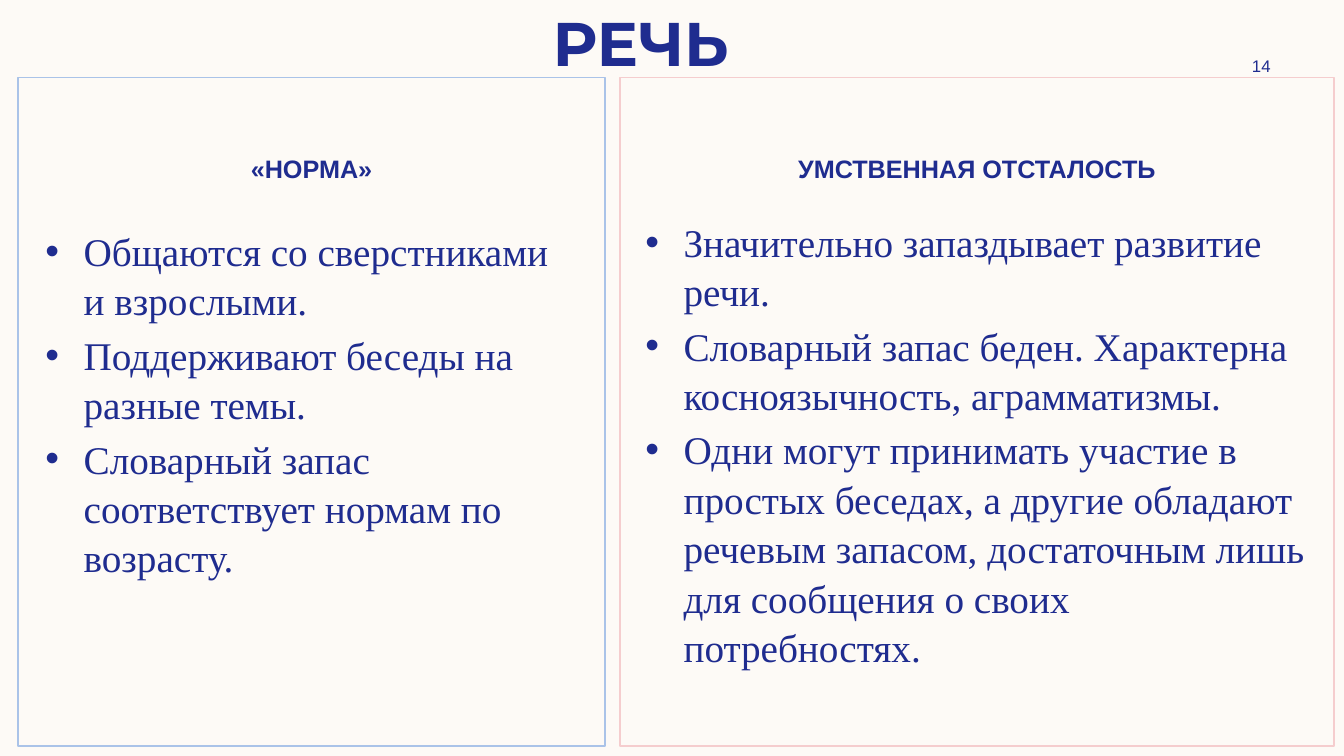
from lxml import etree
from pptx import Presentation
from pptx.dml.color import RGBColor
from pptx.enum.text import MSO_ANCHOR, MSO_AUTO_SIZE, PP_ALIGN
from pptx.oxml.ns import qn
from pptx.util import Inches, Pt

TOP, MIDDLE = MSO_ANCHOR.TOP, MSO_ANCHOR.MIDDLE
CENTER, LEFT = PP_ALIGN.CENTER, PP_ALIGN.LEFT
NO_FIT = MSO_AUTO_SIZE.NONE

NAVY = RGBColor(0x1F, 0x2C, 0x8F)
CREAM = RGBColor(0xFD, 0xFA, 0xF6)
BLUE = RGBColor(0xAA, 0xC3, 0xE8)
PINK = RGBColor(0xF5, 0xCD, 0xCE)

TITLE = "РЕЧЬ"
PAGE_NUMBER = "14"
COLUMNS = [
    {
        "heading": "«НОРМА»",
        "points": [
            "Общаются со сверстниками и взрослыми.",
            "Поддерживают беседы на разные темы.",
            "Словарный запас соответствует нормам по возрасту.",
        ],
        "line": BLUE, "left": 0.18, "width": 5.82,
        "list_box": (0.35, 2.18, 5.49, 4.99),
    },
    {
        "heading": "УМСТВЕННАЯ ОТСТАЛОСТЬ",
        "points": [
            "Значительно запаздывает развитие речи.",
            "Словарный запас беден. Характерна косноязычность, аграмматизмы.",
            "Одни могут принимать участие в простых беседах, а другие обладают "
            "речевым запасом, достаточным лишь для сообщения о своих потребностях.",
        ],
        "line": PINK, "left": 6.15, "width": 7.08,
        "list_box": (6.3, 2.09, 6.75, 5.09),
    },
]
FRAME_TOP, FRAME_HEIGHT = 0.77, 6.63
HEADING_INSET = 0.75
BULLET_INDENT = Inches(0.38)

TITLE_FONT = {"name": "Montserrat", "size": Pt(44), "bold": True}
NUMBER_FONT = {"name": "Arial", "size": Pt(12), "bold": False}
HEADING_FONT = {"name": "Arial", "size": Pt(18), "bold": True}
LIST_FONT = {"name": "Times New Roman", "size": Pt(28), "bold": False}
LIST_SPACING = {"space_before": Pt(3.6), "line_spacing": 1.05}


def place(box, left, top, width, height):
    box.left, box.top = Inches(left), Inches(top)
    box.width, box.height = Inches(width), Inches(height)


def write(box, lines, font, align, anchor, spacing=None):
    frame = box.text_frame
    frame.word_wrap = True
    frame.auto_size = NO_FIT
    frame.vertical_anchor = anchor
    frame.text = "\n".join(lines)
    for para in frame.paragraphs:
        para.alignment = align
        for name, value in (spacing or {}).items():
            setattr(para, name, value)
        for span in para.runs:
            for name, value in font.items():
                setattr(span.font, name, value)
            span.font.color.rgb = NAVY


def add_bullets(box):
    for para in box.text_frame.paragraphs:
        props = para._p.get_or_add_pPr()
        props.set("marL", str(BULLET_INDENT))
        props.set("indent", str(-BULLET_INDENT))
        etree.SubElement(props, qn("a:buFont")).set("typeface", "Arial")
        etree.SubElement(props, qn("a:buChar")).set("char", "•")


def main():
    deck = Presentation()
    deck.slide_width, deck.slide_height = Inches(13.33), Inches(7.5)
    comparison_layout = deck.slide_layouts[4]
    page = deck.slides.add_slide(comparison_layout)
    page.background.fill.solid()
    page.background.fill.fore_color.rgb = CREAM

    title, *bodies = page.placeholders
    place(title, 0.52, 0, 11.67, 0.84)
    write(title, [TITLE], TITLE_FONT, CENTER, MIDDLE)

    number = page.shapes.add_textbox(
        Inches(11.97), Inches(0.5), Inches(1.08), Inches(0.3))
    write(number, [PAGE_NUMBER], NUMBER_FONT, CENTER, MIDDLE)

    for column, heading, points in zip(COLUMNS, bodies[::2], bodies[1::2]):
        place(heading, column["left"], FRAME_TOP, column["width"], FRAME_HEIGHT)
        heading.line.color.rgb = column["line"]
        heading.line.width = Pt(1)
        heading.text_frame.margin_top = Inches(HEADING_INSET)
        write(heading, [column["heading"]], HEADING_FONT, CENTER, TOP)

        place(points, *column["list_box"])
        write(points, column["points"], LIST_FONT, LEFT, TOP, LIST_SPACING)
        add_bullets(points)

    deck.save("out.pptx")


if __name__ == "__main__":
    main()
